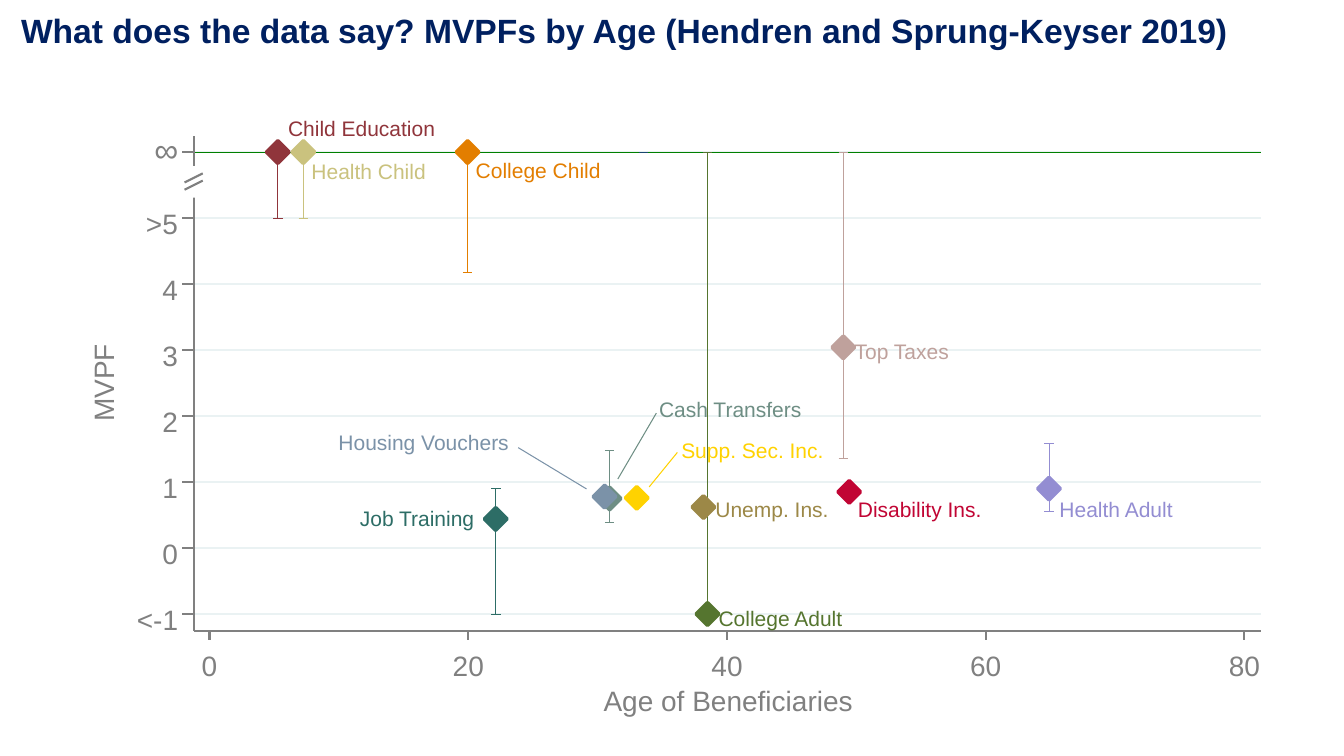
import pptx
import pptx.dml.color
import pptx.enum.shapes
import pptx.enum.text
import pptx.oxml
import pptx.util
from collections import namedtuple

Cm = pptx.util.Cm
RGBColor = pptx.dml.color.RGBColor
Preset = pptx.enum.shapes.MSO_SHAPE

NAVY = RGBColor(0x00, 0x20, 0x60)
WHITE = RGBColor(0xFF, 0xFF, 0xFF)
GREY = RGBColor(0x80, 0x80, 0x80)
PALE = RGBColor(0xEA, 0xF2, 0xF3)
GREEN = RGBColor(0x00, 0x80, 0x00)
BLUE = RGBColor(0x1A, 0x47, 0x6F)
MAROON = RGBColor(0x90, 0x35, 0x3B)
FOREST = RGBColor(0x55, 0x75, 0x2F)
ORANGE = RGBColor(0xE3, 0x7E, 0x00)
CRANBERRY = RGBColor(0xC1, 0x05, 0x34)
LAVENDER = RGBColor(0x93, 0x8D, 0xD2)
KHAKI = RGBColor(0xCA, 0xC2, 0x7E)
TEAL = RGBColor(0x2D, 0x6D, 0x66)
GOLD = RGBColor(0xFF, 0xD2, 0x00)
ROSE = RGBColor(0xBF, 0xA1, 0x9C)
BROWN = RGBColor(0x9C, 0x88, 0x47)
SAGE = RGBColor(0x6E, 0x8E, 0x84)
STEEL = RGBColor(0x7B, 0x92, 0xA8)

# Plot area and scales, in centimetres
LEFT, TOP, RIGHT, BOTTOM = 4.88, 3.43, 31.78, 15.9
AGE_ZERO, AGE_STEP = 5.28, 0.326
MVPF_ZERO, MVPF_STEP = 13.81, 1.663
INFINITE = 6
MARKER, HALF_CAP = 0.57, 0.12

# label_at is left, top and width of the label in centimetres
Policy = namedtuple("Policy", "name age mvpf low high color label_at")
POLICIES = [
    Policy("Child Education", 5.28, 6, 5, 6, MAROON, (7.26, 2.84, 4.11)),
    Policy("College Adult", 38.5, -1, -1, 6, FOREST, (18.11, 15.19, 3.56)),
    Policy("College Child", 19.95, 6, 4.18, 6, ORANGE, (11.99, 3.91, 3.56)),
    Policy("Disability Ins.", 49.45, 0.85, 0.82, 0.9, CRANBERRY, (21.62, 12.45, 3.53)),
    Policy("Health Adult", 64.9, 0.9, 0.56, 1.59, LAVENDER, (26.7, 12.45, 3.25)),
    Policy("Health Child", 7.25, 6, 5, 6, KHAKI, (7.85, 3.94, 3.25)),
    Policy("Job Training", 22.13, 0.44, -1, 0.9, TEAL, (9.07, 12.67, 3.3)),
    Policy("Supp. Sec. Inc.", 33.03, 0.76, 0.64, 0.85, GOLD, (17.17, 10.95, 3.99)),
    Policy("Top Taxes", 49, 3.04, 1.36, 6, ROSE, (21.54, 8.48, 2.84)),
    Policy("Unemp. Ins.", 38.18, 0.62, 0.53, 0.75, BROWN, (18.03, 12.45, 3.25)),
    Policy("Cash Transfers", 30.93, 0.75, 0.38, 1.48, SAGE, (16.61, 9.93, 4.04)),
    Policy("Housing Vouchers", 30.54, 0.78, None, None, STEEL, (8.53, 10.77, 4.78)),
]
LEADERS = [
    (13.06, 11.28, 14.78, 12.32, STEEL),
    (15.57, 12.07, 16.54, 10.41, SAGE),
    (16.36, 12.27, 17.07, 11.4, GOLD),
]
# Left and width of each scale label, by its text
MVPF_LABELS = {"<-1": (3.45, 1.37), ">5": (3.68, 1.12)}
DIGIT_LABEL = (4.09, 0.71)


def age_x(age):
    return AGE_ZERO + age * AGE_STEP


def mvpf_y(mvpf):
    return MVPF_ZERO - mvpf * MVPF_STEP


def add_line(shapes, x1, y1, x2, y2, color, width=0.75):
    line = shapes.add_connector(pptx.enum.shapes.MSO_CONNECTOR.STRAIGHT,
                                Cm(x1), Cm(y1), Cm(x2), Cm(y2))
    line.line.color.rgb = color
    line.line.width = pptx.util.Pt(width)
    line.element.spPr.append(pptx.oxml.parse_xml(
        '<a:effectLst xmlns:a="http://schemas.openxmlformats.org/drawingml/2006/main"/>'))


def add_area(shapes, preset, left, top, width, height, color, line_width=None):
    area = shapes.add_shape(preset, Cm(left), Cm(top), Cm(width), Cm(height))
    area.shadow.inherit = False
    area.fill.solid()
    area.fill.fore_color.rgb = color
    if line_width:
        area.line.color.rgb = color
        area.line.width = pptx.util.Pt(line_width)
    else:
        area.line.fill.background()


def fill_text(box, text, size, color, bold=False):
    frame = box.text_frame
    frame.margin_left = frame.margin_right = frame.margin_top = frame.margin_bottom = 0
    frame.word_wrap = True
    frame.auto_size = pptx.enum.text.MSO_AUTO_SIZE.NONE
    frame.vertical_anchor = pptx.enum.text.MSO_ANCHOR.MIDDLE
    para = frame.paragraphs[0]
    para.alignment = pptx.enum.text.PP_ALIGN.LEFT
    span = para.add_run()
    span.text = text
    span.font.name = "Arial"
    span.font.size = pptx.util.Pt(size)
    span.font.bold = bold
    span.font.color.rgb = color


def add_label(shapes, text, left, top, width, height=0.99, size=20, color=GREY):
    box = shapes.add_textbox(Cm(left), Cm(top), Cm(width), Cm(height))
    fill_text(box, text, size, color)
    return box


def add_title(page, text):
    title = page.shapes.title
    title.left, title.top, title.width, title.height = Cm(0.53), Cm(0.25), Cm(31.55), Cm(1.02)
    fill_text(title, text, 24, NAVY, bold=True)


def add_cap(shapes, age, mvpf, color):
    x, y = age_x(age), mvpf_y(mvpf)
    add_line(shapes, x - HALF_CAP, y, x + HALF_CAP, y, color)


def add_interval(shapes, policy):
    x = age_x(policy.age)
    add_line(shapes, x, mvpf_y(policy.low), x, mvpf_y(policy.high), policy.color)
    for end in (policy.high, policy.low):
        add_cap(shapes, policy.age, end, policy.color)


def add_marker(shapes, policy):
    add_area(shapes, Preset.DIAMOND, age_x(policy.age) - MARKER / 2,
             mvpf_y(policy.mvpf) - MARKER / 2, MARKER, MARKER, policy.color, 2.5)


def add_mvpf_axis(shapes):
    add_line(shapes, LEFT, BOTTOM, LEFT, TOP, GREY, 1.5)
    for mvpf in range(-1, INFINITE + 1):
        y = mvpf_y(mvpf)
        add_line(shapes, LEFT, y, LEFT - 0.28, y, GREY, 1.5)
        if mvpf < INFINITE:
            text = {-1: "<-1", 5: ">5"}.get(mvpf, str(mvpf))
            left, width = MVPF_LABELS.get(text, DIGIT_LABEL)
            add_label(shapes, text, left, y - 0.37, width)
    add_label(shapes, "MVPF", 1.45, 8.99, 2.29).rotation = 270


def add_age_axis(shapes):
    add_line(shapes, LEFT, BOTTOM, RIGHT, BOTTOM, GREY, 1.5)
    for age in range(0, 81, 20):
        x = age_x(age)
        add_line(shapes, x, BOTTOM, x, BOTTOM + 0.23, GREY, 1.5)
        offset, width = (0.39, 1.12) if age else (0.2, 0.71)
        add_label(shapes, str(age), x - offset, 16.28, width)
    add_label(shapes, "Age of Beneficiaries", 15.21, 17.15, 6.65)


def add_axis_break(shapes):
    add_area(shapes, Preset.RECTANGLE, 4.09, 4.19, 1.47, 0.79, WHITE)
    add_line(shapes, LEFT, 4.65, LEFT, 4.5, WHITE, 3)
    for y in (4.6, 4.78):
        add_line(shapes, 4.65, y, 5.11, y - 0.23, GREY, 1.5)
    add_label(shapes, "∞", 3.89, 3.25, 0.61, 1.02, size=24)


def main():
    deck = pptx.Presentation()
    deck.slide_width, deck.slide_height = Cm(33.87), Cm(19.05)
    page = deck.slides.add_slide(deck.slide_layouts[5])
    shapes = page.shapes
    add_title(page, "What does the data say? MVPFs by Age (Hendren and Sprung-Keyser 2019)")

    # Plot area and grid
    add_area(shapes, Preset.RECTANGLE, LEFT, TOP, RIGHT - LEFT, BOTTOM - TOP, WHITE, 1.13)
    for mvpf in range(-1, INFINITE + 1):
        add_line(shapes, LEFT, mvpf_y(mvpf), RIGHT, mvpf_y(mvpf), PALE, 1.5)
    add_line(shapes, LEFT, mvpf_y(INFINITE), RIGHT, mvpf_y(INFINITE), GREEN)

    # Confidence intervals, then markers on top
    for policy in POLICIES:
        if policy.low is not None:
            add_interval(shapes, policy)
    add_cap(shapes, 33.55, INFINITE, BLUE)
    for policy in POLICIES:
        add_marker(shapes, policy)

    # Axes
    add_mvpf_axis(shapes)
    add_age_axis(shapes)
    add_axis_break(shapes.add_group_shape().shapes)

    # Policy names and their leader lines
    for leader in LEADERS:
        add_line(shapes, *leader)
    for policy in POLICIES:
        add_label(shapes, policy.name, *policy.label_at, height=0.76, size=15, color=policy.color)

    deck.save("out.pptx")


if __name__ == "__main__":
    main()
